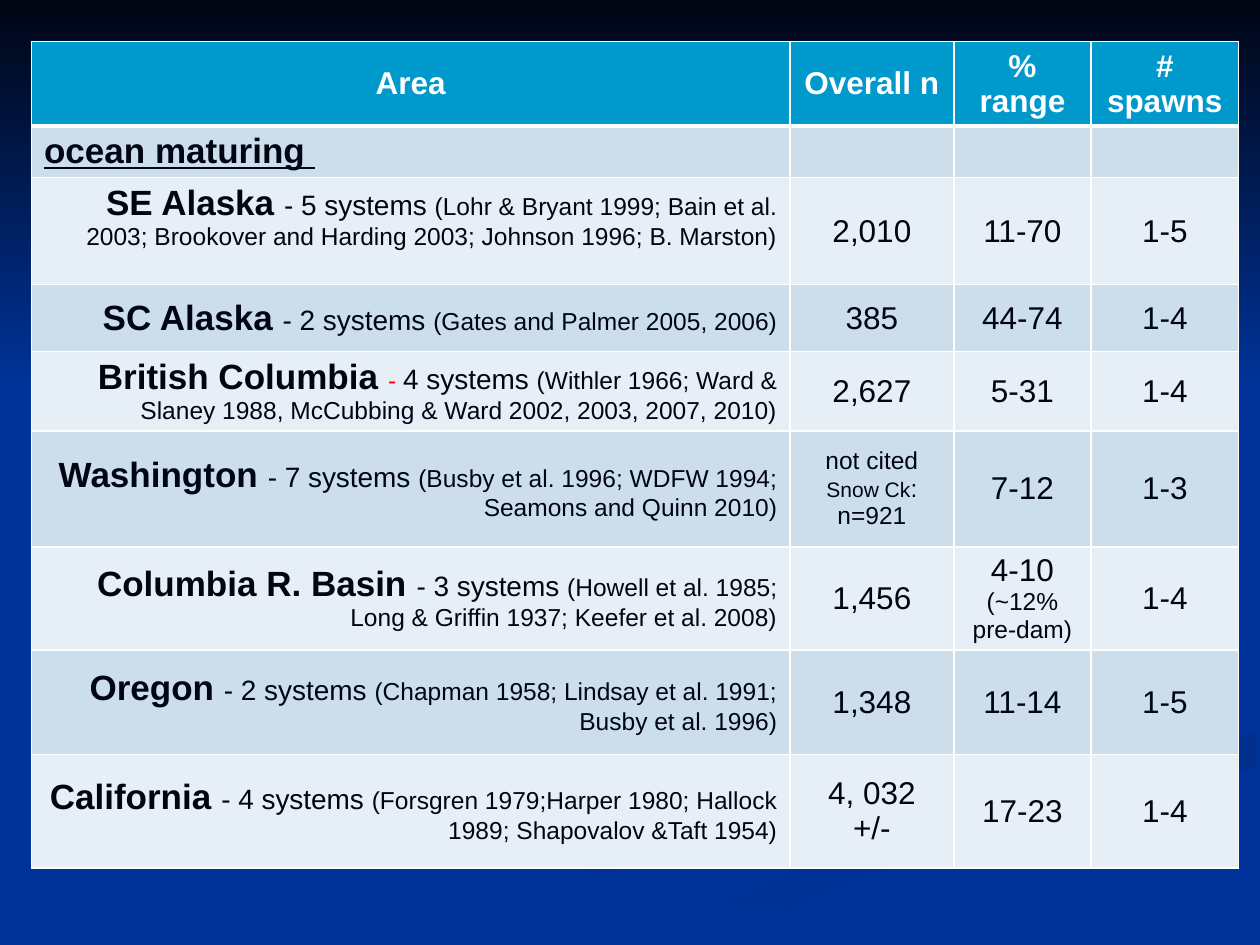
from lxml import etree
from pptx import Presentation
from pptx.dml.color import RGBColor
from pptx.enum.shapes import MSO_SHAPE
from pptx.enum.text import MSO_ANCHOR, PP_ALIGN
from pptx.oxml.ns import qn
from pptx.util import Inches, Pt

LEFT, MID, RIGHT = PP_ALIGN.LEFT, PP_ALIGN.CENTER, PP_ALIGN.RIGHT
TOP, CENTER = MSO_ANCHOR.TOP, MSO_ANCHOR.MIDDLE
RECT = MSO_SHAPE.RECTANGLE
HEX = {"back": "003399", "ink": "000514", "white": "FFFFFF", "head": "0099CC",
       "dark": "CCDEEC", "light": "E7EFF6", "red": "FF0000",
       "shade": "002F8C", "dim": "003193"}


def write(par, text, size=18, bold=False, color="ink", line=False):
    run = par.add_run()
    run.text = text
    font = run.font
    font.name, font.size, font.bold, font.underline = "Arial", Pt(size), bold, line
    font.color.rgb = RGBColor.from_string(HEX[color])


def blend(shape, start, end, angle):
    shape.shadow.inherit = False
    shape.line.fill.background()
    shape.fill.gradient()
    shape.fill.gradient_angle = angle
    for stop, name in zip(shape.fill.gradient_stops, (start, end)):
        stop.color.rgb = RGBColor.from_string(HEX[name])
    for stop, place in zip(shape.fill.gradient_stops, (0, 1)):
        stop.position = place


deck = Presentation()
deck.slide_width, deck.slide_height = Inches(10), Inches(7.5)
slide = deck.slides.add_slide(deck.slide_layouts[6])
slide.background.fill.solid()
slide.background.fill.fore_color.rgb = RGBColor.from_string(HEX["back"])

curves = [
    ([(7.82, 5.53), (7.45, 5.38), (6.83, 5.19), (6.26, 5.02), (5.87, 4.81),
      (5.75, 4.59), (5.7, 4.72), (5.93, 4.91), (6.54, 5.13), (7.28, 5.35),
      (7.76, 5.53), (7.86, 5.66), (7.67, 5.87), (7.14, 6.05), (6.17, 6.29),
      (4.99, 6.61), (4.17, 6.9), (3.38, 7.27), (3, 7.49), (3.61, 7.49),
      (4.31, 7.14), (4.99, 6.87), (5.64, 6.65), (6.51, 6.4), (7.4, 6.18),
      (7.86, 6.01), (8, 5.81), (7.92, 5.61)], "back", "dim", 0),
    ([(5.2, 7.47), (5.04, 7.49), (5.71, 7.49), (6, 7.33), (6.3, 7.19),
      (6.7, 7.02), (7.22, 6.82), (7.85, 6.61), (8.61, 6.4), (9.49, 6.2),
      (9.98, 6.09), (9.98, 5.81), (9.76, 5.9), (9.36, 6.02), (8.67, 6.2),
      (7.65, 6.47), (6.96, 6.69), (6.3, 6.93), (5.7, 7.19)],
     "shade", "back", 270),
]
for spots, start, end, angle in curves:
    spots = [(Inches(x), Inches(y)) for x, y in spots]
    pen = slide.shapes.build_freeform(*spots[0])
    pen.add_line_segments(spots[1:], close=True)
    blend(pen.convert_to_shape(), start, end, angle)

sky = slide.shapes.add_shape(RECT, 0, 0, Inches(10), Inches(3.08))
blend(sky, "ink", "back", 270)

heads = ["Area", "Overall n", "% range", "# spawns"]
areas = [
    ("SE Alaska ", "- 5 systems ", "(Lohr & Bryant 1999; Bain et al. 2003; Brookover and Harding 2003; Johnson 1996; B. Marston)",
     "2,010", "11-70", "1-5"),
    ("SC Alaska ", "- 2 systems ", "(Gates and Palmer 2005, 2006)",
     "385", "44-74", "1-4"),
    ("British Columbia ", "4 systems ", "(Withler 1966; Ward & Slaney 1988, McCubbing & Ward 2002, 2003, 2007, 2010)",
     "2,627", "5-31", "1-4"),
    ("Washington ", "- 7 systems ", "(Busby et al. 1996; WDFW 1994; Seamons and Quinn 2010)",
     [[("not cited ", 14), ("Snow Ck", 12), (": n=921", 14)]], "7-12", "1-3"),
    ("Columbia R. Basin ", "- 3 systems ", "(Howell et al. 1985; Long & Griffin 1937; Keefer et al. 2008)",
     "1,456", [[("4-10 ", 18), ("(~12% pre-dam)", 14)]], "1-4"),
    ("Oregon ", "- 2 systems ", "(Chapman 1958; Lindsay et al. 1991; Busby et al. 1996)",
     "1,348", "11-14", "1-5"),
    ("California ", "- 4 systems ", "(Forsgren 1979;Harper 1980; Hallock 1989; Shapovalov &Taft 1954)",
     [[("4, 032", 18)], [("+/-", 18)]], "17-23", "1-4"),
]
wide = [6.02, 1.3, 1.09, 1.17]
tall = [0.67, 0.4, 0.85, 0.53, 0.63, 0.92, 0.82, 0.83, 0.9]
table = slide.shapes.add_table(len(tall), len(wide), Inches(0.25), Inches(0.33),
                               Inches(sum(wide)), Inches(sum(tall))).table
for col, width in zip(table.columns, wide):
    col.width = Inches(width)
for row, height in zip(table.rows, tall):
    row.height = Inches(height)

for r in range(len(tall)):
    for c in range(len(wide)):
        cell = table.cell(r, c)
        cell.vertical_anchor = CENTER
        props = cell._tc.get_or_add_tcPr()
        for side in "LRTB":
            thick = 3 if (r, side) in ((0, "B"), (1, "T")) else 1
            edge = etree.SubElement(props, qn(f"a:ln{side}"), w=str(Pt(thick)))
            paint = etree.SubElement(edge, qn("a:solidFill"))
            etree.SubElement(paint, qn("a:srgbClr"), val=HEX["white"])
        shade = "head" if r == 0 else "dark" if r % 2 else "light"
        cell.fill.solid()
        cell.fill.fore_color.rgb = RGBColor.from_string(HEX[shade])

for c, text in enumerate(heads):
    par = table.cell(0, c).text_frame.paragraphs[0]
    par.alignment = MID
    write(par, text, bold=True, color="white")

par = table.cell(1, 0).text_frame.paragraphs[0]
par.alignment = LEFT
write(par, "ocean maturing ", size=20, bold=True, line=True)

for r, (area, count, cite, *stats) in enumerate(areas, 2):
    par = table.cell(r, 0).text_frame.paragraphs[0]
    par.alignment = RIGHT
    write(par, area, size=20, bold=True)
    if not count.startswith("-"):
        write(par, "- ", size=14, color="red")
    write(par, count, size=16)
    write(par, cite, size=14)
    for c, stat in enumerate(stats, 1):
        frame = table.cell(r, c).text_frame
        rows = [[(stat, 18)]] if isinstance(stat, str) else stat
        for i, runs in enumerate(rows):
            par = frame.add_paragraph() if i else frame.paragraphs[0]
            par.alignment = MID
            for text, size in runs:
                write(par, text, size=size)
table.cell(2, 0).vertical_anchor = TOP

deck.save("out.pptx")
